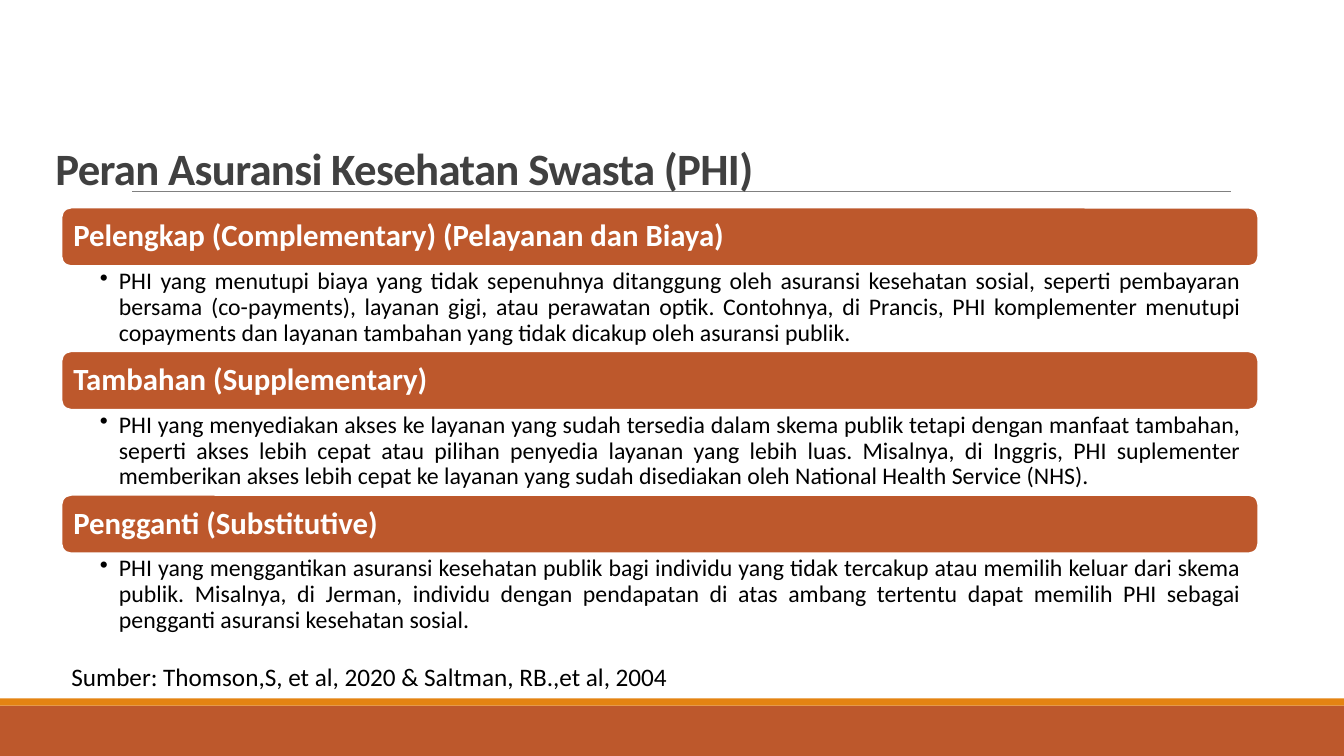
import pptx
import pptx.util
import pptx.dml.color
import pptx.enum.shapes
import pptx.enum.text
import pptx.oxml.ns
from dataclasses import dataclass
from lxml import etree
from pptx.util import Inches


@dataclass(frozen=True)
class Theme:
    font: str = "Calibri"
    rust: str = "BD582C"
    orange: str = "E48312"
    gray: str = "808080"
    dark: str = "404040"
    white: str = "FFFFFF"
    black: str = "000000"
    title: int = 32
    heading: int = 22
    body: int = 17
    source: int = 18


T = Theme()
RGB = pptx.dml.color.RGBColor.from_string
SHAPE = pptx.enum.shapes.MSO_SHAPE
ANCHOR = pptx.enum.text.MSO_ANCHOR
ALIGN = pptx.enum.text.PP_ALIGN
qn = pptx.oxml.ns.qn


def write(sp, text, size, color, bold=False, align=ALIGN.LEFT, anchor=ANCHOR.TOP,
          insets=(0.1, 0.05, 0.1, 0.05), leading=1.0, spacing=None, bullet=False):
    """Put one formatted paragraph in a shape; insets are left, top, right, bottom."""
    tf = sp.text_frame
    tf.word_wrap = True
    tf.auto_size = pptx.enum.text.MSO_AUTO_SIZE.NONE
    tf.vertical_anchor = anchor
    tf.margin_left, tf.margin_top, tf.margin_right, tf.margin_bottom = map(Inches, insets)
    p = tf.paragraphs[0]
    p.alignment = align
    p.line_spacing = leading
    r = p.add_run()
    r.text = text
    r.font.name = T.font
    r.font.size = pptx.util.Pt(size)
    r.font.bold = bold
    r.font.color.rgb = RGB(color)
    if spacing is not None:
        r._r.get_or_add_rPr().set("spc", str(int(spacing * 100)))
    if bullet:
        p.level = 1
        pPr = p._p.get_or_add_pPr()
        pPr.set("marL", str(Inches(0.19)))
        pPr.set("indent", str(Inches(-0.19)))
        etree.SubElement(pPr, qn("a:buChar")).set("char", "•")


def add_block(s, kind, left, top, width, height, fill):
    sp = s.shapes.add_shape(kind, Inches(left), Inches(top), Inches(width), Inches(height))
    sp.shadow.inherit = False
    sp.fill.solid()
    sp.fill.fore_color.rgb = RGB(fill)
    sp.line.fill.background()
    return sp


prs = pptx.Presentation()
prs.slide_width, prs.slide_height = Inches(13.33), Inches(7.5)
s = prs.slides.add_slide(prs.slide_layouts[5])

# Title and the rule behind it
title = s.shapes.title
title.left, title.top, title.width, title.height = map(Inches, (0.45, 0.7, 12.27, 1.28))
write(title, "Peran Asuransi Kesehatan Swasta (PHI)", T.title, T.dark, bold=True,
      anchor=ANCHOR.BOTTOM, leading=0.85, spacing=-0.5)
rule = s.shapes.add_connector(pptx.enum.shapes.MSO_CONNECTOR.STRAIGHT,
                              Inches(1.31), Inches(1.9), Inches(12.21), Inches(1.9))
rule.line.color.rgb = RGB(T.gray)
rule.line.width = pptx.util.Pt(0.5)
etree.SubElement(rule.element.spPr, qn("a:effectLst"))
title.element.addprevious(rule.element)

# Footer bands
add_block(s, SHAPE.RECTANGLE, 0, 7, 13.33, 0.5, T.rust)
add_block(s, SHAPE.RECTANGLE, 0, 6.93, 13.33, 0.07, T.orange)

# Roles of private insurance
roles = [
    ("Pelengkap (Complementary) (Pelayanan dan Biaya)",
     "PHI yang menutupi biaya yang tidak sepenuhnya ditanggung oleh asuransi kesehatan sosial, "
     "seperti pembayaran bersama (co-payments), layanan gigi, atau perawatan optik. Contohnya, "
     "di Prancis, PHI komplementer menutupi copayments dan layanan tambahan yang tidak dicakup "
     "oleh asuransi publik."),
    ("Tambahan (Supplementary)",
     "PHI yang menyediakan akses ke layanan yang sudah tersedia dalam skema publik tetapi dengan "
     "manfaat tambahan, seperti akses lebih cepat atau pilihan penyedia layanan yang lebih luas. "
     "Misalnya, di Inggris, PHI suplementer memberikan akses lebih cepat ke layanan yang sudah "
     "disediakan oleh National Health Service (NHS)."),
    ("Pengganti (Substitutive)",
     "PHI yang menggantikan asuransi kesehatan publik bagi individu yang tidak tercakup atau "
     "memilih keluar dari skema publik. Misalnya, di Jerman, individu dengan pendapatan di atas "
     "ambang tertentu dapat memilih PHI sebagai pengganti asuransi kesehatan sosial."),
]
left, width, heading_h, body_h = 0.61, 11.87, 0.58, 0.85
for i, (heading, body) in enumerate(roles):
    top = 2.06 + i * (heading_h + body_h - 0.005)
    bar = add_block(s, SHAPE.ROUNDED_RECTANGLE, left, top, width, heading_h, T.rust)
    bar.line.color.rgb = RGB(T.white)
    bar.line.width = pptx.util.Pt(1.25)
    # The rounded corners add 0.03 to each inset
    write(bar, heading, T.heading, T.white, bold=True, anchor=ANCHOR.MIDDLE,
          insets=(0.09, 0.09, 0.09, 0.09), leading=0.9)
    box = s.shapes.add_textbox(Inches(left), Inches(top + heading_h), Inches(width), Inches(body_h))
    write(box, body, T.body, T.black, align=ALIGN.JUSTIFY,
          insets=(0.38, 0.03, 0.17, 0.03), leading=0.9, bullet=True)

source = s.shapes.add_textbox(Inches(left), Inches(6.51), Inches(7.73), Inches(0.4))
write(source, "Sumber: Thomson,S, et al, 2020 & Saltman, RB.,et al, 2004", T.source, T.black)

prs.save("out.pptx")
